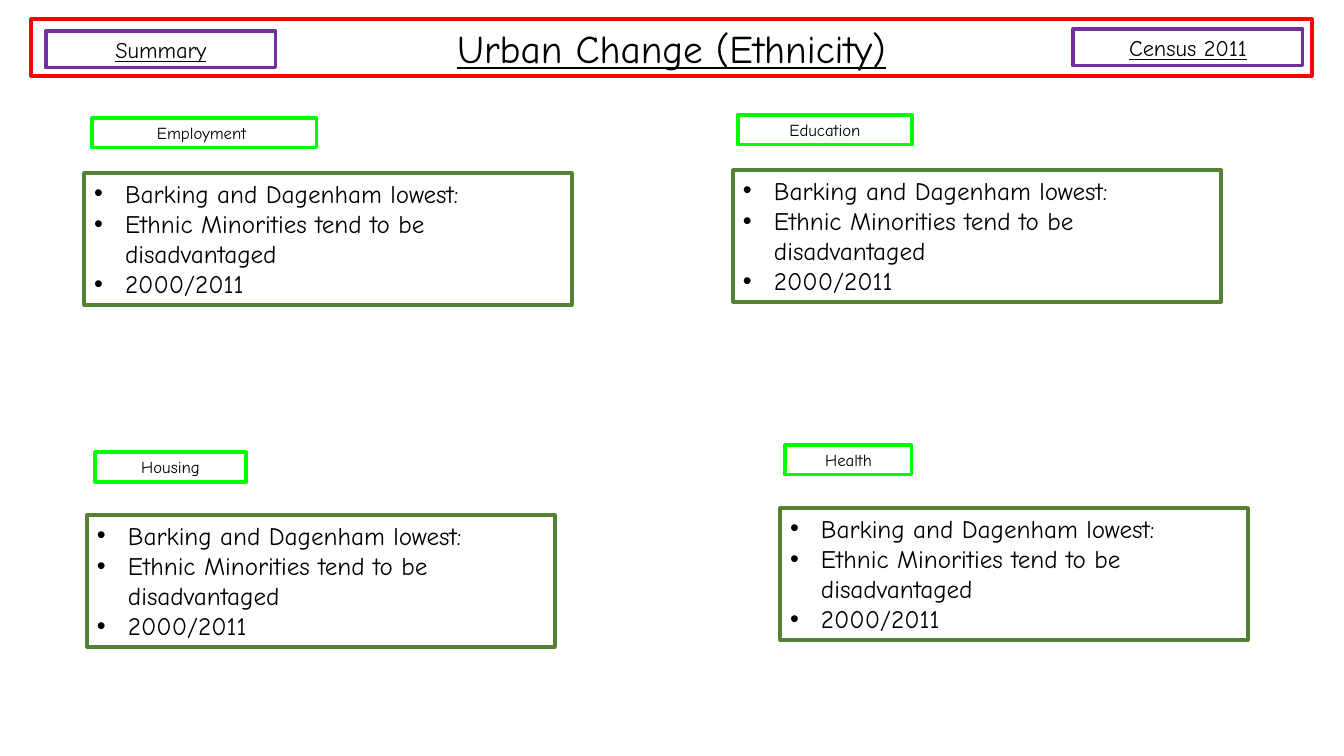
from lxml.etree import SubElement
from pptx import Presentation
from pptx.dml.color import RGBColor
from pptx.enum.text import MSO_ANCHOR, MSO_AUTO_SIZE, PP_ALIGN
from pptx.oxml.ns import qn
from pptx.util import Emu, Pt

PX = 914400 / 100.8
FONT = "Comic Neue"
FINDINGS = [
    "Barking and Dagenham lowest:",
    "Ethnic Minorities tend to be disadvantaged",
    "2000/2011",
]
TOPICS = [
    ("Employment ", (84, 173, 488, 132), (8, -55, 225)),
    ("Education", (733, 170, 488, 132), (5, -55, 174)),
    ("Housing", (87, 515, 468, 132), (8, -63, 151)),
    ("Health", (780, 508, 468, 132), (5, -63, 127)),
]


def px(length):
    return Emu(round(length * PX))


def colour(code):
    return RGBColor.from_string(code)


def place(part, box, outline):
    part.left, part.top, part.width, part.height = map(px, box)
    part.line.color.rgb = colour(outline)
    part.line.width = Pt(2.25)


def add_bullet(paragraph):
    properties = paragraph._p.get_or_add_pPr()
    properties.set("marL", str(px(31)))
    properties.set("indent", str(-px(31)))
    SubElement(properties, qn("a:buFont"), typeface="Arial")
    SubElement(properties, qn("a:buChar"), char="•")


def write(part, lines, size, align=PP_ALIGN.CENTER, underline=False, bullets=False):
    frame = part.text_frame
    frame.word_wrap = True
    frame.vertical_anchor = MSO_ANCHOR.TOP
    frame.auto_size = MSO_AUTO_SIZE.NONE
    frame.margin_left = frame.margin_right = px(10)
    frame.margin_top = frame.margin_bottom = px(5)
    frame.text = "\n".join(lines)
    for paragraph in frame.paragraphs:
        paragraph.alignment = align
        paragraph.space_before = paragraph.space_after = Pt(0)
        paragraph.line_spacing = 1.0
        if bullets:
            add_bullet(paragraph)
        for run in paragraph.runs:
            run.font.name = FONT
            run.font.size = Pt(size)
            run.font.bold = False
            run.font.underline = underline
            run.font.color.rgb = colour("000000")


def add_label(slide, text, box, outline, size, underline=False):
    label = slide.shapes.add_textbox(*map(px, box))
    place(label, box, outline)
    write(label, [text], size, underline=underline)


def add_header(slide, box):
    left, top, width, height = box
    title = slide.shapes.title
    place(title, box, "FF0000")
    write(title, ["Urban Change (Ethnicity)"], 28, underline=True)
    tag_width, tag_height = 230, 37
    summary = (left + 15, top + 12, tag_width, tag_height)
    census = (left + width - tag_width - 9, top + 10, tag_width, tag_height)
    add_label(slide, "Summary", summary, "7030A0", 16, underline=True)
    add_label(slide, "Census 2011", census, "7030A0", 16, underline=True)


def add_topic(slide, findings, heading, box, heading_offset):
    left, top, width, height = box
    shift_x, shift_y, heading_width = heading_offset
    heading_box = (left + shift_x, top + shift_y, heading_width, 30)
    add_label(slide, heading, heading_box, "00FF00", 12)
    place(findings, box, "548235")
    write(findings, FINDINGS, 18, align=PP_ALIGN.LEFT, bullets=True)


def main():
    presentation = Presentation()
    presentation.slide_width, presentation.slide_height = px(1344), px(756)
    comparison_layout = presentation.slide_layouts[4]
    slide = presentation.slides.add_slide(comparison_layout)
    bodies = list(slide.placeholders)[1:]
    add_header(slide, (31, 19, 1281, 57))
    for findings, topic in zip(bodies, TOPICS):
        add_topic(slide, findings, *topic)
    presentation.save("out.pptx")


if __name__ == "__main__":
    main()
